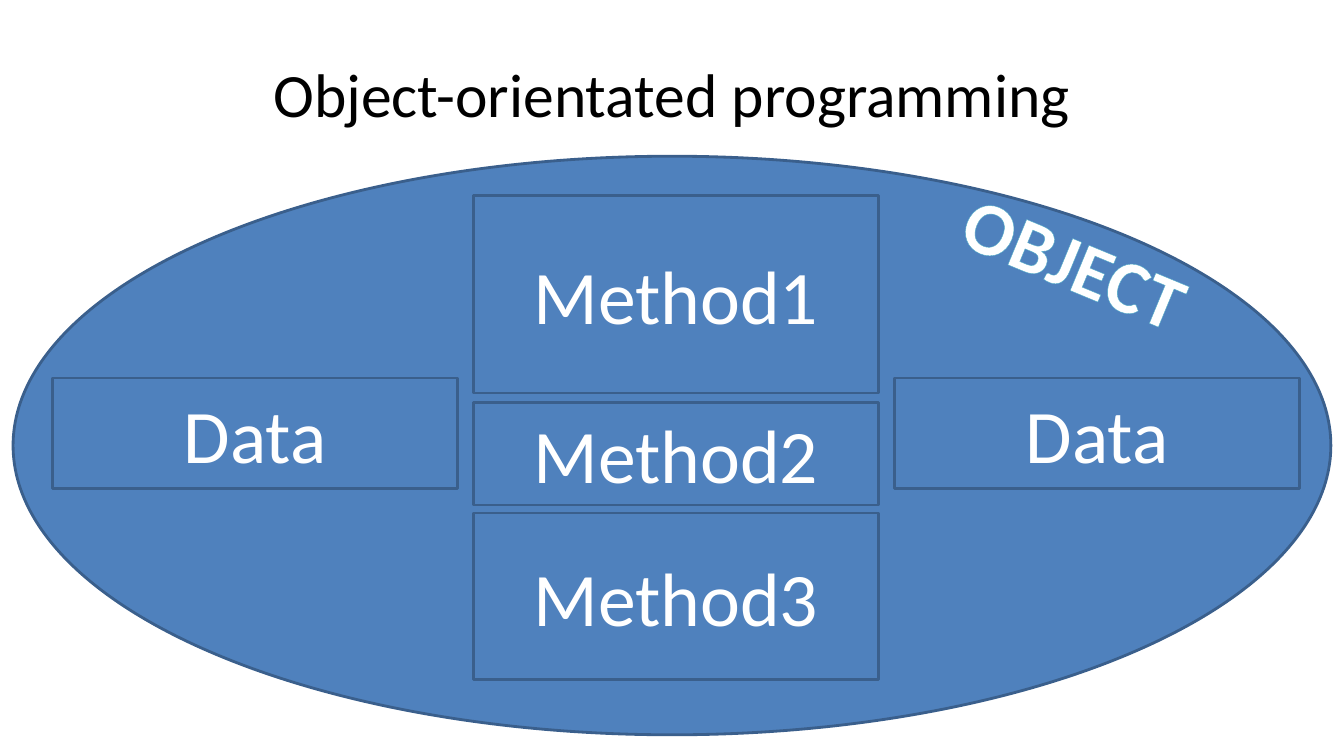
import pptx
import pptx.util
import pptx.dml.color
import pptx.enum.shapes
import pptx.enum.text
import pptx.oxml
import pptx.oxml.ns

Inches = pptx.util.Inches
Pt = pptx.util.Pt
RGBColor = pptx.dml.color.RGBColor
MSO_SHAPE = pptx.enum.shapes.MSO_SHAPE
CENTER = pptx.enum.text.PP_ALIGN.CENTER
MIDDLE = pptx.enum.text.MSO_ANCHOR.MIDDLE

BLUE = RGBColor(0x4F, 0x81, 0xBD)
DARK_BLUE = RGBColor(0x3A, 0x5F, 0x8C)
TEAL = RGBColor(0x4B, 0xAC, 0xC6)
WHITE = RGBColor(0xFF, 0xFF, 0xFF)
BLACK = RGBColor(0, 0, 0)

SLIDE_WIDTH = 13.33
LEFT_MARGIN = 0.52
BOX_WIDTH = 4.02
COLUMN_GAP = 0.155
columns = [LEFT_MARGIN + index * (BOX_WIDTH + COLUMN_GAP) for index in range(3)]


def format_text(text_frame, text, size, color, bold=False):
    text_frame.text = text
    paragraph = text_frame.paragraphs[0]
    paragraph.alignment = CENTER
    paragraph.font.name = "Calibri"
    paragraph.font.size = Pt(size)
    paragraph.font.bold = bold
    paragraph.font.color.rgb = color


def add_blue_shape(kind, left, top, width, height):
    shape = slide.shapes.add_shape(
        kind, Inches(left), Inches(top), Inches(width), Inches(height))
    shape.shadow.inherit = False
    shape.fill.solid()
    shape.fill.fore_color.rgb = BLUE
    shape.line.color.rgb = DARK_BLUE
    shape.line.width = Pt(2)
    return shape


presentation = pptx.Presentation()
presentation.slide_width = Inches(SLIDE_WIDTH)
presentation.slide_height = Inches(7.5)
slide = presentation.slides.add_slide(presentation.slide_layouts[5])

# Title
title = slide.shapes.title
title.left, title.top = Inches(SLIDE_WIDTH * 0.05), Inches(0.3)
title.width, title.height = Inches(SLIDE_WIDTH * 0.9), Inches(1.25)
title.text_frame.vertical_anchor = MIDDLE
format_text(title.text_frame, "Object-orientated programming", 44, BLACK)

# The object, with its data on both sides of its methods
add_blue_shape(MSO_SHAPE.OVAL, 0.13, 1.55, SLIDE_WIDTH - 2 * 0.13, 5.74)

boxes = [
    ("Method1", 1, 1.94, 1.96),
    ("Method2", 1, 3.99, 1.02),
    ("Method3", 1, 5.09, 1.65),
    ("Data", 2, 3.75, 1.1),
    ("Data", 0, 3.75, 1.1),
]
for text, column, top, height in boxes:
    box = add_blue_shape(MSO_SHAPE.RECTANGLE, columns[column], top, BOX_WIDTH, height)
    box.text_frame.vertical_anchor = MIDDLE
    format_text(box.text_frame, text, 54, WHITE)

# Tilted label along the edge of the ellipse
label = slide.shapes.add_textbox(Inches(9.4), Inches(2.08), Inches(2.53), Inches(1.01))
label.rotation = 22.5
label.text_frame.word_wrap = False
label.text_frame.auto_size = pptx.enum.text.MSO_AUTO_SIZE.SHAPE_TO_FIT_TEXT
format_text(label.text_frame, "OBJECT", 54, WHITE, bold=True)
outline = pptx.oxml.parse_xml(
    f'<a:ln {pptx.oxml.ns.nsdecls("a")} w="{Pt(0.8)}"><a:solidFill>'
    f'<a:srgbClr val="{TEAL}"/></a:solidFill></a:ln>')
run = label.text_frame.paragraphs[0].runs[0]
run.font.fill.solid()
run.font.fill.fore_color.rgb = WHITE
run.font._element.insert(0, outline)

presentation.save("out.pptx")
